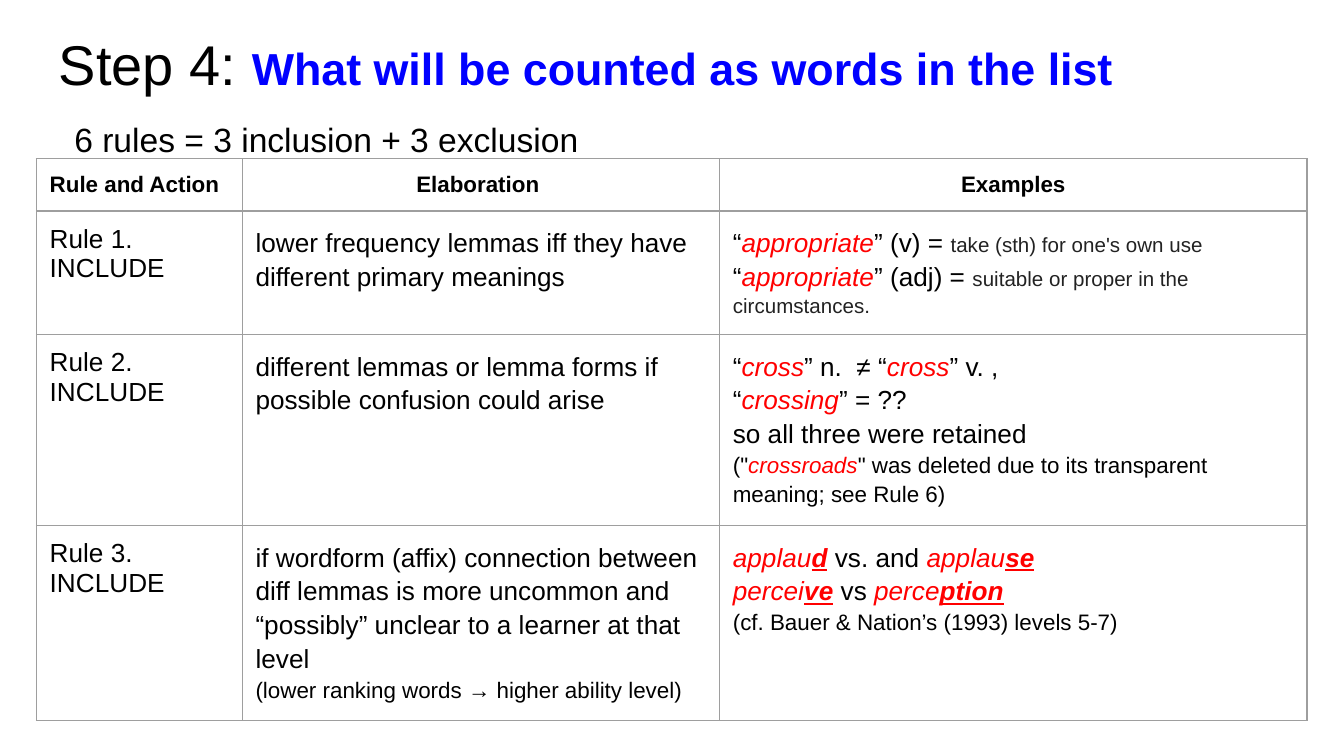
from lxml import etree
from pptx import Presentation
from pptx import util as u
from pptx.dml.color import RGBColor
from pptx.enum import text
from pptx.oxml import ns

COLORS = {"black": "000000", "blue": "0000FF", "red": "FF0000",
          "gray": "222222", "border": "9E9E9E"}
STYLES = {
    "step": {"size": 30},
    "topic": {"size": 24, "color": "blue", "bold": True},
    "rules": {"size": 18},
    "head": {"size": 12, "bold": True},
    "body": {"size": 14},
    "note": {"size": 12},
    "gloss": {"size": 11, "color": "gray"},
    "word": {"size": 14, "color": "red", "italic": True},
    "affix": {"size": 14, "color": "red", "italic": True, "bold": True, "underline": True},
    "noteword": {"size": 12, "color": "red", "italic": True},
}
TITLE = [
    [("Step 4: ", "step"), ("What will be counted as words in the list", "topic")],
    [(" ", "step"), ("6 rules = 3 inclusion + 3 exclusion", "rules")],
]
HEADERS = ["Rule and Action", "Elaboration ", "Examples"]
RULES = [
    ([[("lower frequency lemmas iff they have different primary meanings", "body")]],
     [[("“", "body"), ("appropriate", "word"), ("” (v) = ", "body"),
       ("take (sth) for one's own use", "gloss")],
      [("“", "body"), ("appropriate", "word"), ("” (adj) = ", "body"),
       ("suitable or proper in the circumstances.", "gloss")]]),
    ([[("different lemmas or lemma forms if possible confusion could arise", "body")]],
     [[("“", "body"), ("cross", "word"), ("” n.  ≠ “", "body"),
       ("cross", "word"), ("” v. ,", "body")],
      [("“", "body"), ("crossing", "word"), ("” = ??", "body")],
      [("so all three were retained", "body")],
      [("(\"", "note"), ("crossroads", "noteword"),
       ("\" was deleted due to its transparent meaning; see Rule 6)", "note")]]),
    ([[("if wordform (affix) connection between diff lemmas is more uncommon and "
        "“possibly” unclear to a learner at that level", "body")],
      [("(lower ranking words → higher ability level)", "note")]],
     [[("applau", "word"), ("d", "affix"), (" ", "word"), ("vs. and ", "body"),
       ("applau", "word"), ("se", "affix")],
      [("percei", "word"), ("ve", "affix"), (" ", "word"), ("vs ", "body"),
       ("perce", "word"), ("ption", "affix")],
      [("(cf. Bauer & Nation’s (1993) levels 5-7)", "note")]]),
]
COL_WIDTHS = [3.89, 9.02, 11.1]
ROW_HEIGHTS = [0.99, 2.34, 3.61, 3.68]
INSET = u.Cm(0.25)


def write(tf, paragraphs, align=text.PP_ALIGN.LEFT, spacing=1.0):
    """Fill a text frame with paragraphs of (text, style name) runs."""
    for i, runs in enumerate(paragraphs):
        p = tf.add_paragraph() if i else tf.paragraphs[0]
        p.alignment = align
        p.line_spacing = spacing
        for content, name in runs:
            style = STYLES[name]
            r = p.add_run()
            r.text = content
            r.font.name = "Arial"
            r.font.size = u.Pt(style["size"])
            r.font.bold = style.get("bold", False)
            r.font.italic = style.get("italic", False)
            r.font.underline = style.get("underline", False)
            r.font.color.rgb = RGBColor.from_string(COLORS[style.get("color", "black")])


def set_insets(obj):
    """Give a text frame or cell the same inset on every side."""
    obj.margin_left = obj.margin_right = obj.margin_top = obj.margin_bottom = INSET


def add_borders(cell):
    """Draw a thin line on all four sides of a cell."""
    tc_pr = cell._tc.get_or_add_tcPr()
    for i, side in enumerate(("lnL", "lnR", "lnT", "lnB")):
        ln = etree.Element(ns.qn(f"a:{side}"), w=str(u.Pt(0.75)))
        fill = etree.SubElement(ln, ns.qn("a:solidFill"))
        etree.SubElement(fill, ns.qn("a:srgbClr"), val=COLORS["border"])
        tc_pr.insert(i, ln)


def fill_cell(cell, paragraphs, **layout):
    """Write and format one table cell."""
    set_insets(cell)
    cell.vertical_anchor = text.MSO_ANCHOR.TOP
    cell.fill.background()
    add_borders(cell)
    write(cell.text_frame, paragraphs, **layout)


def place_title(s, left, top, width, height):
    """Place the two-line heading in the title placeholder."""
    sp = s.shapes.title
    sp.left, sp.top, sp.width, sp.height = left, top, width, height
    tf = sp.text_frame
    set_insets(tf)
    tf.word_wrap = True
    tf.auto_size = text.MSO_AUTO_SIZE.NONE
    tf.vertical_anchor = text.MSO_ANCHOR.TOP
    write(tf, TITLE)


def place_rules(s, left, top, width, height):
    """Place the rule table, sharing the box by column and row proportions."""
    table = s.shapes.add_table(len(RULES) + 1, len(HEADERS), left, top, width, height).table
    table.first_row = table.horz_banding = False
    for col, share in zip(table.columns, COL_WIDTHS):
        col.width = int(width * share / sum(COL_WIDTHS))
    for row, share in zip(table.rows, ROW_HEIGHTS):
        row.height = int(height * share / sum(ROW_HEIGHTS))
    for c, header in enumerate(HEADERS):
        align = text.PP_ALIGN.CENTER if c else text.PP_ALIGN.LEFT
        fill_cell(table.cell(0, c), [[(header, "head")]], align=align)
    for n, (elaboration, examples) in enumerate(RULES, 1):
        fill_cell(table.cell(n, 0), [[(f"Rule {n}. INCLUDE", "body")]])
        fill_cell(table.cell(n, 1), elaboration, spacing=1.15)
        fill_cell(table.cell(n, 2), examples, spacing=1.15)


def main():
    """Build and save the slide."""
    prs = Presentation()
    prs.slide_width, prs.slide_height = u.Cm(25.4), u.Cm(14.29)
    s = prs.slides.add_slide(prs.slide_layouts[5])
    place_title(s, u.Cm(0.86), u.Cm(0.3), u.Cm(23.67), u.Cm(1.47))
    place_rules(s, u.Cm(0.69), u.Cm(3), u.Cm(24.01), u.Cm(10.62))
    prs.save("out.pptx")


if __name__ == "__main__":
    main()
